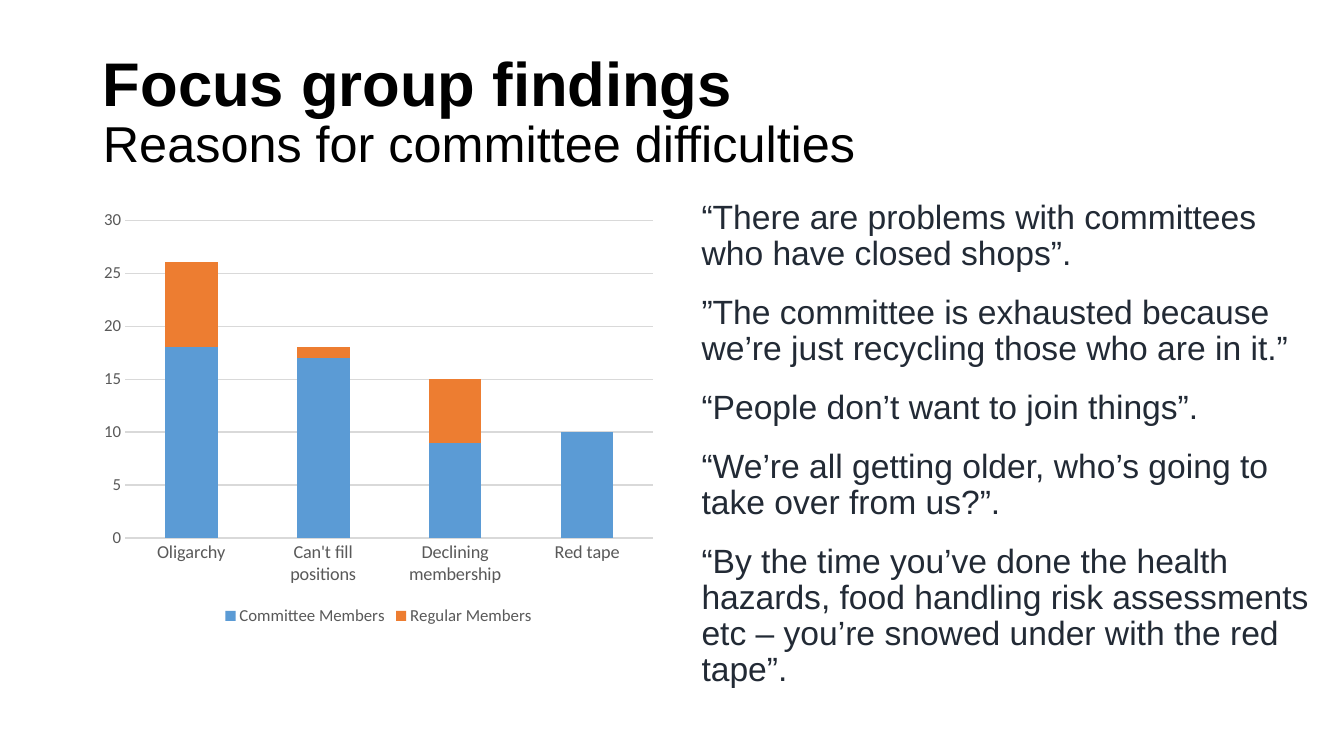
import pptx
import pptx.chart.data
import pptx.dml.color
import pptx.enum.chart
import pptx.enum.text
import pptx.util
from pptx.util import Inches

COLOURS = {
    "title": "000000",
    "quote": "222A35",
    "label": "595959",
    "grid": "D9D9D9",
    "Committee Members": "5B9BD5",
    "Regular Members": "ED7D31",
}
REASONS = ["Oligarchy", "Can't fill positions", "Declining membership", "Red tape"]
MENTIONS = {
    "Committee Members": [18, 17, 9, 10],
    "Regular Members": [8, 1, 6, 0],
}
QUOTES = [
    "“There are problems with committees who have closed shops”.",
    "”The committee is exhausted because we’re just recycling those who are in it.”",
    "“People don’t want to join things”.",
    "“We’re all getting older, who’s going to take over from us?”.",
    "“By the time you’ve done the health hazards, food handling risk assessments "
    "etc – you’re snowed under with the red tape”.",
]


def colour(name):
    """Return the named colour."""
    return pptx.dml.color.RGBColor.from_string(COLOURS[name])


def style_font(font, size, name, face="Arial", bold=False):
    """Set size, colour, face and weight of a font."""
    font.size = pptx.util.Pt(size)
    font.color.rgb = colour(name)
    font.name = face
    font.bold = bold


def style_line(line, name):
    """Draw a thin line in the named colour."""
    line.color.rgb = colour(name)
    line.width = pptx.util.Pt(0.75)


def add_span(para, text, size, name, bold=False):
    """Append one formatted run."""
    span = para.add_run()
    span.text = text
    style_font(span.font, size, name, bold=bold)


def place_title(page, left, top, width, height):
    """Fill the title placeholder with a heading and a lighter second line."""
    title = page.shapes.title
    title.left, title.top, title.width, title.height = left, top, width, height
    frame = title.text_frame
    frame.word_wrap = True
    frame.vertical_anchor = pptx.enum.text.MSO_ANCHOR.MIDDLE
    para = frame.paragraphs[0]
    para.alignment = pptx.enum.text.PP_ALIGN.LEFT
    para.line_spacing = 0.9
    add_span(para, "Focus group findings", 44, "title", bold=True)
    para.add_line_break()
    add_span(para, "Reasons for committee difficulties", 36, "title")


def place_chart(page, left, top, width, height):
    """Add the stacked columns of reasons by member group."""
    chart_data = pptx.chart.data.CategoryChartData()
    chart_data.categories = REASONS
    for group, counts in MENTIONS.items():
        chart_data.add_series(group, counts)
    kind = pptx.enum.chart.XL_CHART_TYPE.COLUMN_STACKED
    chart = page.shapes.add_chart(kind, left, top, width, height, chart_data).chart
    chart.has_title = False
    style_font(chart.font, 10, "title", "Calibri")

    plot = chart.plots[0]
    plot.gap_width = 150
    plot.overlap = 100
    plot.vary_by_categories = False
    for series in plot.series:
        series.format.fill.solid()
        series.format.fill.fore_color.rgb = colour(series.name)

    reasons, counts = chart.category_axis, chart.value_axis
    for axis, size in ((reasons, 13), (counts, 12)):
        axis.major_tick_mark = pptx.enum.chart.XL_TICK_MARK.NONE
        axis.minor_tick_mark = pptx.enum.chart.XL_TICK_MARK.NONE
        style_font(axis.tick_labels.font, size, "label", "Calibri")
    style_line(reasons.format.line, "grid")
    counts.format.line.fill.background()
    counts.minimum_scale, counts.maximum_scale, counts.major_unit = 0, 30, 5
    style_line(counts.major_gridlines.format.line, "grid")

    chart.has_legend = True
    chart.legend.position = pptx.enum.chart.XL_LEGEND_POSITION.BOTTOM
    chart.legend.include_in_layout = False
    style_font(chart.legend.font, 12, "label", "Calibri")


def place_quotes(page, left, top, width, height):
    """Add the column of participants' quotes."""
    frame = page.shapes.add_textbox(left, top, width, height).text_frame
    frame.word_wrap = True
    for index, quote in enumerate(QUOTES):
        para = frame.add_paragraph() if index else frame.paragraphs[0]
        para.line_spacing = 0.9
        para.space_before = pptx.util.Pt(10 if index else 0)
        para.space_after = pptx.util.Pt(6)
        add_span(para, quote, 24, "quote")


def main():
    """Build and save the deck."""
    deck = pptx.Presentation()
    deck.slide_width, deck.slide_height = Inches(13.33), Inches(7.5)
    page = deck.slides.add_slide(deck.slide_layouts.get_by_name("Title Only"))
    place_title(page, Inches(0.92), Inches(0.4), Inches(11.5), Inches(1.45))
    place_quotes(page, Inches(6.86), Inches(1.94), Inches(6.3), Inches(4.25))
    place_chart(page, Inches(0.92), Inches(2), Inches(5.67), Inches(4.25))
    deck.save("out.pptx")


if __name__ == "__main__":
    main()
